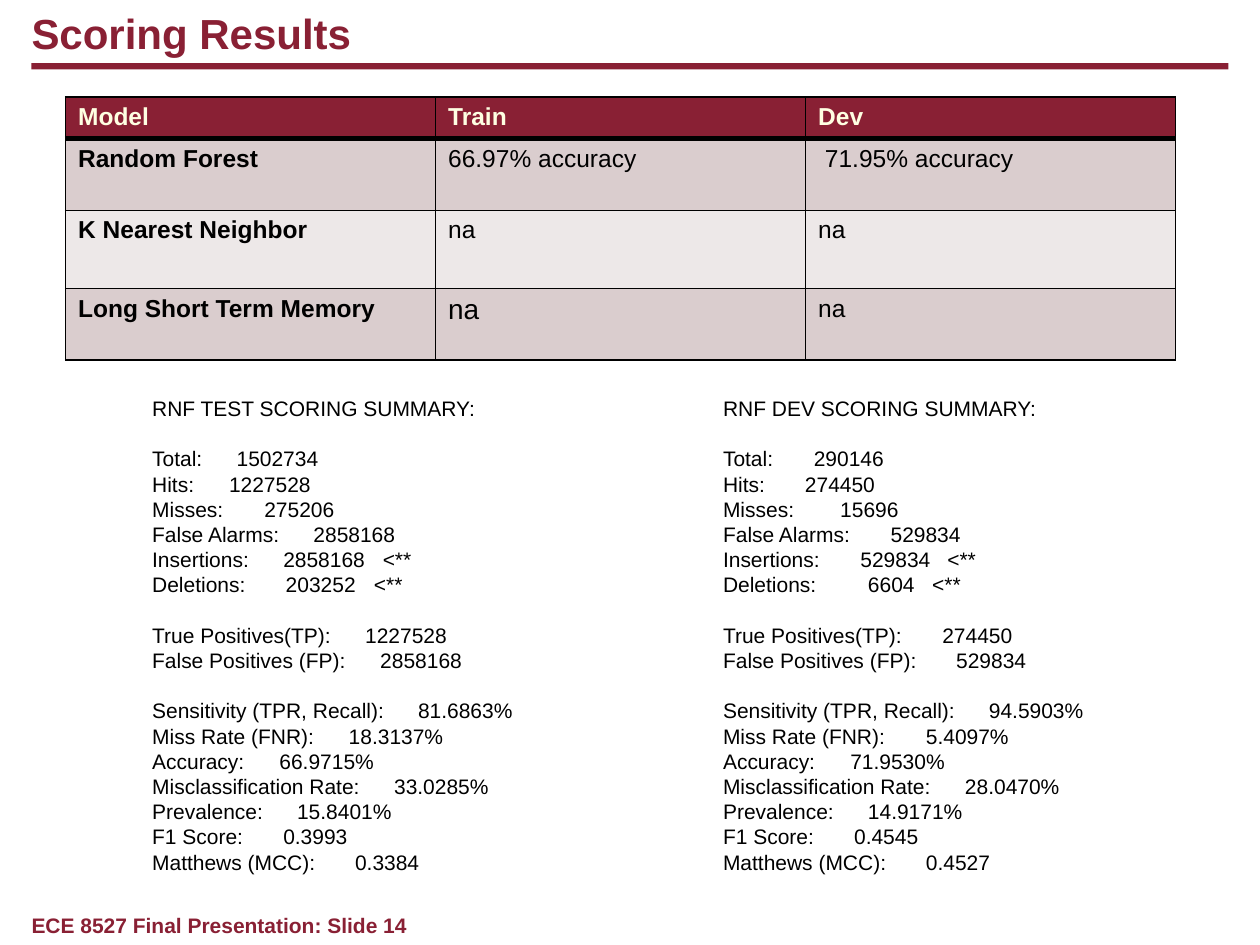
from lxml import etree
from pptx import Presentation
from pptx.dml.color import RGBColor
from pptx.enum.shapes import MSO_SHAPE
from pptx.enum.text import MSO_ANCHOR, MSO_AUTO_SIZE, PP_ALIGN
from pptx.oxml.ns import qn
from pptx.util import Inches, Pt

RECTANGLE = MSO_SHAPE.RECTANGLE
TOP = MSO_ANCHOR.TOP
NO_AUTO_SIZE = MSO_AUTO_SIZE.NONE
LEFT = PP_ALIGN.LEFT

MAROON = RGBColor(0x89, 0x20, 0x34)
CREAM = RGBColor(0xFF, 0xFF, 0xE2)
BLACK = RGBColor(0, 0, 0)
DARK_BAND = RGBColor(0xDA, 0xCD, 0xCE)
LIGHT_BAND = RGBColor(0xED, 0xE8, 0xE8)

SLIDE_WIDTH, SLIDE_HEIGHT = Inches(10), Inches(7.5)
COLUMNS, ROWS = 100, 75
GROUP_GAP = 14.4

SCORES = [
    ["Model", "Train", "Dev"],
    ["Random Forest", "66.97% accuracy", " 71.95% accuracy"],
    ["K Nearest Neighbor", "na", "na"],
    ["Long Short Term Memory", "na", "na"],
]
ROW_HEIGHTS = [3.3, 5.7, 6.2, 5.7]

# Each group holds lines: the tab-separated text and its tab stops in inches.
TEST_SUMMARY = [
    [("RNF TEST SCORING SUMMARY:", [])],
    [
        ("Total:\t1502734", [0.67]),
        ("Hits:\t1227528", [0.61]),
        ("Misses:\t275206", [0.89]),
        ("False Alarms:\t2858168", [1.28]),
        ("Insertions:\t2858168\t<**", [1.04, 1.83]),
        ("Deletions:\t203252\t<**", [1.06, 1.76]),
    ],
    [
        ("True Positives(TP):\t1227528", [1.69]),
        ("False Positives (FP):\t2858168", [1.81]),
    ],
    [
        ("Sensitivity (TPR, Recall):\t81.6863%", [2.11]),
        ("Miss Rate (FNR):\t18.3137%", [1.56]),
        ("Accuracy:\t66.9715%", [1.01]),
        ("Misclassification Rate:\t33.0285%", [1.92]),
        ("Prevalence:\t15.8401%", [1.15]),
        ("F1 Score:\t0.3993", [1.04]),
        ("Matthews (MCC):\t0.3384", [1.61]),
    ],
]
DEV_SUMMARY = [
    [("RNF DEV SCORING SUMMARY:", [])],
    [
        ("Total:\t290146", [0.72]),
        ("Hits:\t274450", [0.65]),
        ("Misses:\t15696", [0.93]),
        ("False Alarms:\t529834", [1.33]),
        ("Insertions:\t529834\t<**", [1.09, 1.78]),
        ("Deletions:\t6604\t<**", [1.15, 1.66]),
    ],
    [
        ("True Positives(TP):\t274450", [1.74]),
        ("False Positives (FP):\t529834", [1.85]),
    ],
    [
        ("Sensitivity (TPR, Recall):\t94.5903%", [2.11]),
        ("Miss Rate (FNR):\t5.4097%", [1.61]),
        ("Accuracy:\t71.9530%", [1.01]),
        ("Misclassification Rate:\t28.0470%", [1.92]),
        ("Prevalence:\t14.9171%", [1.15]),
        ("F1 Score:\t0.4545", [1.04]),
        ("Matthews (MCC):\t0.4527", [1.61]),
    ],
]


def write_text(paragraph, text, size=12, color=BLACK, bold=False, space_before=0, tab_stops=()):
    paragraph.text = text
    paragraph.alignment = LEFT
    paragraph.space_before = Pt(space_before)
    if tab_stops:
        properties = paragraph._p.get_or_add_pPr()
        tab_list = etree.SubElement(properties, qn("a:tabLst"))
        for stop in tab_stops:
            etree.SubElement(tab_list, qn("a:tab"), pos=str(Inches(stop)), algn="l")
    for run in paragraph.runs:
        font = run.font
        font.name = "Arial"
        font.size = Pt(size)
        font.bold = bold
        font.color.rgb = color


def draw_borders(cell, bottom_width):
    properties = cell._tc.get_or_add_tcPr()
    widths = {"lnL": 1, "lnR": 1, "lnT": 1, "lnB": bottom_width}
    for position, (side, width) in enumerate(widths.items()):
        line = etree.Element(qn(f"a:{side}"), w=str(Pt(width)))
        fill = etree.SubElement(line, qn("a:solidFill"))
        etree.SubElement(fill, qn("a:srgbClr"), val=str(BLACK))
        properties.insert(position, line)


class SlideBuilder:
    """Places elements on a grid of COLUMNS by ROWS."""

    def __init__(self, presentation):
        self.slide = presentation.slides.add_slide(presentation.slide_layouts[5])

    def box(self, column, row, width, height):
        across, down = SLIDE_WIDTH / COLUMNS, SLIDE_HEIGHT / ROWS
        return [round(column * across), round(row * down),
                round(width * across), round(height * down)]

    def frame(self, shape, margins):
        frame = shape.text_frame
        frame.word_wrap = True
        frame.auto_size = NO_AUTO_SIZE
        frame.vertical_anchor = TOP
        if not margins:
            frame.margin_left = frame.margin_right = 0
            frame.margin_top = frame.margin_bottom = 0
        return frame

    def title(self, text, *place):
        shape = self.slide.shapes.title
        shape.left, shape.top, shape.width, shape.height = self.box(*place)
        frame = self.frame(shape, margins=False)
        write_text(frame.paragraphs[0], text, size=24, color=MAROON, bold=True)

    def rule(self, *place):
        shape = self.slide.shapes.add_shape(RECTANGLE, *self.box(*place))
        shape.shadow.inherit = False
        shape.fill.solid()
        shape.fill.fore_color.rgb = MAROON
        shape.line.fill.background()

    def footer(self, text, *place):
        frame = self.frame(self.slide.shapes.add_textbox(*self.box(*place)), margins=False)
        write_text(frame.paragraphs[0], text, color=MAROON, bold=True)

    def score_table(self, rows, heights, column, row, width):
        place = self.box(column, row, width, sum(heights))
        table = self.slide.shapes.add_table(len(rows), len(rows[0]), *place).table
        for row_index, (texts, height) in enumerate(zip(rows, heights)):
            table.rows[row_index].height = self.box(0, 0, 0, height)[3]
            header = row_index == 0
            band = MAROON if header else DARK_BAND if row_index % 2 else LIGHT_BAND
            for column_index, text in enumerate(texts):
                cell = table.cell(row_index, column_index)
                cell.fill.solid()
                cell.fill.fore_color.rgb = band
                draw_borders(cell, bottom_width=3 if header else 1)
                write_text(
                    cell.text_frame.paragraphs[0], text,
                    size=16 if (row_index, column_index) == (3, 1) else 14,
                    color=CREAM if header else BLACK,
                    bold=header or column_index == 0,
                )

    def summary(self, groups, *place):
        frame = self.frame(self.slide.shapes.add_textbox(*self.box(*place)), margins=True)
        paragraph = frame.paragraphs[0]
        for group_index, group in enumerate(groups):
            for line_index, (text, tab_stops) in enumerate(group):
                if group_index or line_index:
                    paragraph = frame.add_paragraph()
                starts_group = group_index > 0 and line_index == 0
                write_text(paragraph, text, tab_stops=tab_stops,
                           space_before=GROUP_GAP if starts_group else 0)


def main():
    presentation = Presentation()
    presentation.slide_width, presentation.slide_height = SLIDE_WIDTH, SLIDE_HEIGHT
    builder = SlideBuilder(presentation)
    builder.rule(2.5, 5, 95, 0.5)
    builder.footer("ECE 8527 Final Presentation: Slide 14", 2.5, 72.4, 89.2, 2)
    builder.title("Scoring Results", 2.5, 0.6, 94.8, 4)
    builder.score_table(SCORES, ROW_HEIGHTS, 5.2, 7.7, 88.1)
    builder.summary(DEV_SUMMARY, 56.4, 30.9, 32.5, 39.4)
    builder.summary(TEST_SUMMARY, 11.1, 30.9, 50, 39.4)
    presentation.save("out.pptx")


if __name__ == "__main__":
    main()
